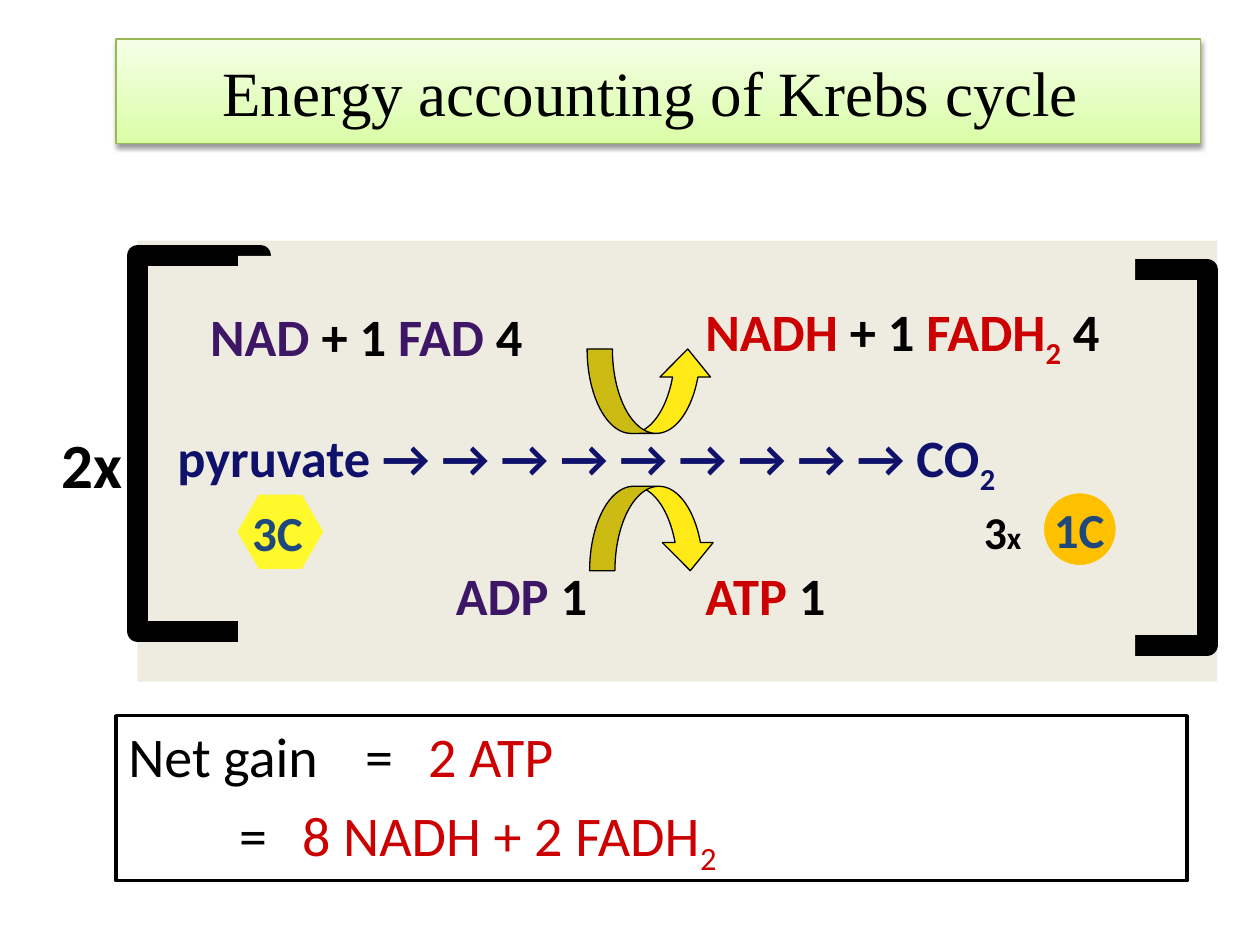
from lxml.etree import SubElement
from pptx import Presentation
from pptx.dml.color import RGBColor
from pptx.enum.shapes import MSO_SHAPE
from pptx.enum.text import MSO_ANCHOR, PP_ALIGN
from pptx.oxml.ns import qn
from pptx.util import Inches, Pt

COLS, ROWS = 100, 75
prs = Presentation()
prs.slide_width, prs.slide_height = Inches(10), Inches(7.5)
CELL_W, CELL_H = prs.slide_width / COLS, prs.slide_height / ROWS

BLACK, WHITE, BEIGE = "000000", "FFFFFF", "EEECE1"
RED, PURPLE, NAVY, BLUE = "CC0000", "3D1666", "0F116A", "1F497D"


def rgb(value):
    return RGBColor.from_string(value)


def emu(box, x, y, w, h):
    """Turn grid cells, counted from the box corner, into slide lengths."""
    return (round((box[0] + x) * CELL_W), round((box[1] + y) * CELL_H),
            round(w * CELL_W), round(h * CELL_H))


def add_shape(s, kind, place, fill=None, line=None, width=0.75):
    sp = s.shapes.add_shape(kind, *place)
    sp.shadow.inherit = False
    if fill:
        sp.fill.solid()
        sp.fill.fore_color.rgb = rgb(fill)
    else:
        sp.fill.background()
    if line:
        sp.line.color.rgb = rgb(line)
        sp.line.width = Pt(width)
    else:
        sp.line.fill.background()
    return sp


def write(p, runs, size, bold=False):
    """Add (text, colour) runs; a third item is a run's size or 'sub'."""
    p.alignment = PP_ALIGN.LEFT
    p.font.name, p.font.size, p.font.bold = "Calibri", Pt(size), bold
    for text, color, *extra in runs:
        r = p.add_run()
        r.text = text
        r.font.color.rgb = rgb(color)
        if extra == ["sub"]:
            r.font._element.set("baseline", "-25000")
        elif extra:
            r.font.size = Pt(extra[0])


def set_label(sp, runs, size, margin=0.1):
    tf = sp.text_frame
    tf.word_wrap = True
    tf.vertical_anchor = MSO_ANCHOR.MIDDLE
    tf.margin_left = tf.margin_right = Inches(margin)
    write(tf.paragraphs[0], runs, size, bold=True)


def add_label(s, place, runs, size=30):
    set_label(s.shapes.add_textbox(*place), runs, size)


def add_title(s, box):
    title = s.shapes.title
    title.left, title.top, title.width, title.height = emu(box, 0, 0, *box[2:])
    title.fill.gradient()
    title.fill.gradient_angle = 90
    for stop, color, pos in zip(title.fill.gradient_stops, ("DAFDA7", "F5FFE7"), (0, 1)):
        stop.color.rgb = rgb(color)
        stop.position = pos
    title.line.color.rgb = rgb("98B955")
    title.line.width = Pt(0.75)
    effects = SubElement(title._element.spPr, qn("a:effectLst"))
    shadow = SubElement(effects, qn("a:outerShdw"), blurRad=str(Pt(3.1)),
                        dist=str(Pt(1.6)), dir="5400000", rotWithShape="0")
    color = SubElement(shadow, qn("a:srgbClr"), val=BLACK)
    SubElement(color, qn("a:alpha"), val="38000")
    tf = title.text_frame
    tf.text = "Energy accounting of Krebs cycle "
    tf.vertical_anchor = MSO_ANCHOR.MIDDLE
    p = tf.paragraphs[0]
    p.alignment = PP_ALIGN.CENTER
    p.font.name, p.font.size = "Times New Roman", Pt(36)
    p.font.color.rgb = rgb(BLACK)


def add_brackets(s, box):
    """Outline two rectangles and cover the inner side of each."""
    for frame_x, frame_y, cover_x in ((0, 1.2, 8), (75.1, 2.3, 73)):
        add_shape(s, MSO_SHAPE.RECTANGLE, emu(box, frame_x, frame_y, 9.8, 29.8),
                  line=BLACK, width=12)
        add_shape(s, MSO_SHAPE.RECTANGLE, emu(box, cover_x, 1.2, 6.2, 33.2), BEIGE)


def add_turn(s, place, flip=False):
    sp = add_shape(s, MSO_SHAPE.CURVED_UP_ARROW, place, "FFEA18", BLACK)
    for i, value in enumerate((0.3, 0.6, 0.333)):
        sp.adjustments[i] = value
    if flip:
        sp._element.spPr.find(qn("a:xfrm")).set("flipV", "1")


def add_reaction(s, box):
    add_shape(s, MSO_SHAPE.RECTANGLE, emu(box, 0, 0, *box[2:]), BEIGE)
    factor = add_shape(s, MSO_SHAPE.RECTANGLE, emu(box, -7, 14.2, 7.6, 7), WHITE)
    set_label(factor, [("2x", BLACK)], 36)
    add_brackets(s, box)
    add_turn(s, emu(box, 35.7, 8.6, 10, 6.7))
    add_turn(s, emu(box, 35.9, 19.5, 10, 6.7), flip=True)

    labels = (
        (4.8, 4.5, 31.3, [("NAD ", PURPLE), ("+ 1 ", BLACK), ("FAD", PURPLE), (" 4", BLACK)]),
        (44.1, 4.5, 38.9, [("NADH ", RED), ("+ 1 ", BLACK), ("FADH", RED),
                           ("2", RED, "sub"), (" 4", BLACK)]),
        (2.2, 14.5, 75.8, [("pyruvate → → → → → → → → → CO", NAVY), ("2", NAVY, "sub")]),
        (24.3, 25.1, 14.3, [("ADP", PURPLE), (" 1", BLACK)]),
        (44.1, 25.1, 13.8, [("ATP", RED), (" 1", BLACK)]),
    )
    for x, y, w, runs in labels:
        add_label(s, emu(box, x, y, w, 6), runs)

    hexagon = add_shape(s, MSO_SHAPE.HEXAGON, emu(box, 8, 20.2, 6.7, 5.8), "FFF82A", "FFF82A")
    hexagon.adjustments[0] = 0.289
    set_label(hexagon, [("3C", BLUE)], 28, margin=0)
    add_label(s, emu(box, 66.2, 20.4, 5.6, 5.3), [("3", BLACK), ("x", BLACK, 18)], 26)
    circle = add_shape(s, MSO_SHAPE.OVAL, emu(box, 71.9, 20, 5.8, 5.8), "FFC000", BEIGE)
    set_label(circle, [("1C", BLUE)], 28, margin=0)


def add_net_gain(s, box):
    sp = add_shape(s, MSO_SHAPE.RECTANGLE, emu(box, 0, 0, *box[2:]), WHITE, BLACK, 2)
    tf = sp.text_frame
    tf.word_wrap = True
    tf.vertical_anchor = MSO_ANCHOR.TOP
    lines = (
        [("Net gain\t=\t", BLACK), ("2 ATP", RED)],
        [("\t\t=\t", BLACK), ("8 NADH + 2 FADH", RED), ("2", RED, "sub")],
    )
    for i, runs in enumerate(lines):
        p = tf.add_paragraph() if i else tf.paragraphs[0]
        write(p, runs, 32)
        p.space_before = Pt(6.4)
        pPr = p._p.get_or_add_pPr()
        pPr.set("marL", str(Inches(0.38)))
        pPr.set("indent", str(Inches(-0.38)))


def main():
    s = prs.slides.add_slide(prs.slide_layouts[5])
    add_title(s, (9.2, 3.1, 86.1, 8.3))
    add_reaction(s, (10.9, 19.1, 85.7, 35))
    add_net_gain(s, (9.2, 56.8, 85, 13.1))
    prs.save("out.pptx")


if __name__ == "__main__":
    main()
